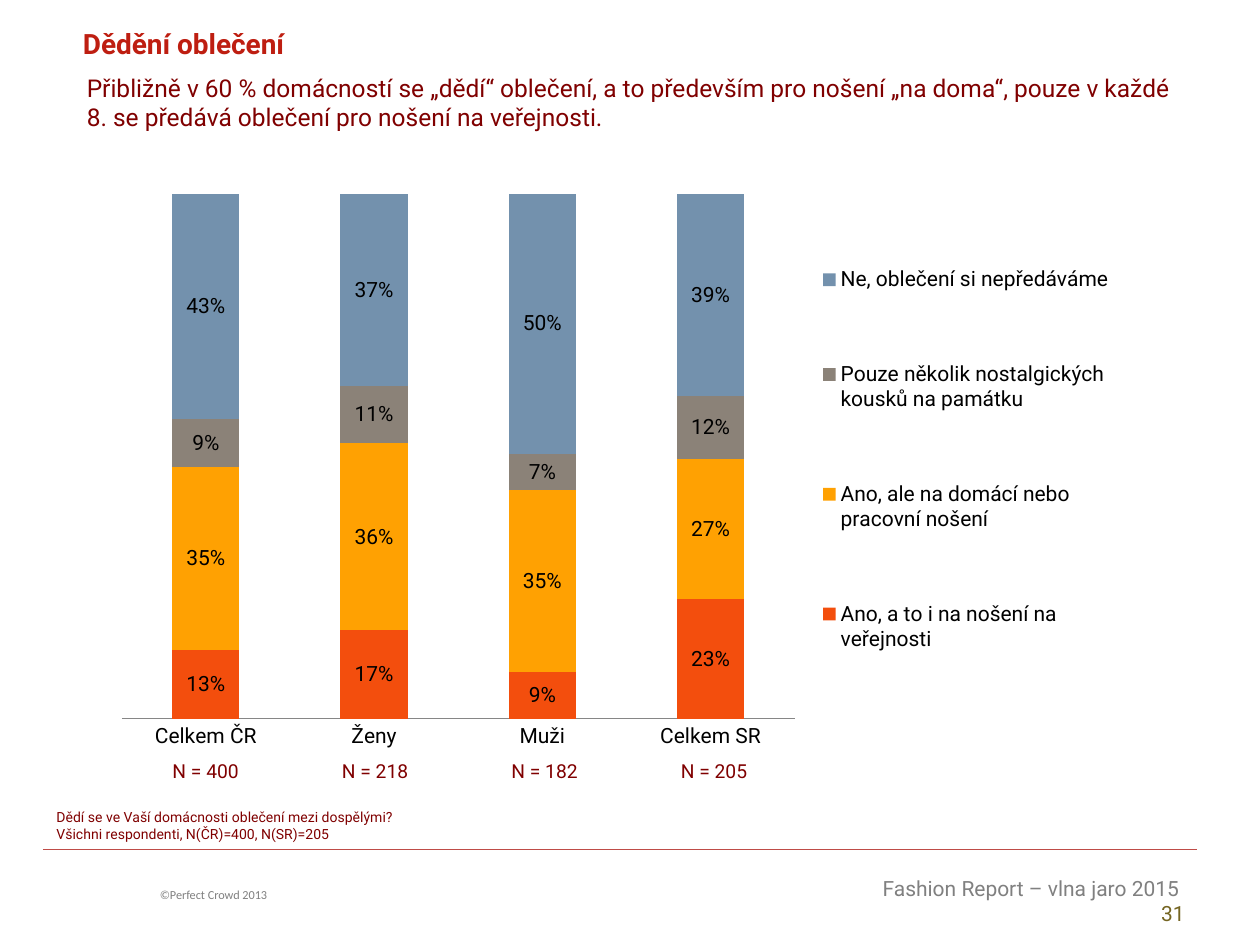
from lxml import etree
from pptx import Presentation
from pptx.chart.data import CategoryChartData
from pptx.dml.color import RGBColor
from pptx.enum.chart import XL_CHART_TYPE, XL_LEGEND_POSITION, XL_TICK_MARK
from pptx.enum.shapes import MSO_CONNECTOR
from pptx.enum.text import MSO_ANCHOR, PP_ALIGN
from pptx.oxml.ns import qn
from pptx.util import Inches, Pt

STACKED = XL_CHART_TYPE.COLUMN_STACKED_100
LEGEND_RIGHT = XL_LEGEND_POSITION.RIGHT
NO_TICK = XL_TICK_MARK.NONE
LEFT, CENTER, RIGHT = PP_ALIGN.LEFT, PP_ALIGN.CENTER, PP_ALIGN.RIGHT
STRAIGHT = MSO_CONNECTOR.STRAIGHT
color = RGBColor.from_string
MAROON, GRAY = "800000", "808080"

deck = Presentation()
deck.slide_width, deck.slide_height = Inches(10), Inches(7.5)
page = deck.slides.add_slide(deck.slide_layouts[6])


def set_layout(element, position, bounds, inner=False):
    """Place a chart part by fractions (x, y, w, h) of the chart area."""
    for old in element.findall(qn("c:layout")):
        element.remove(old)
    layout = etree.Element(qn("c:layout"))
    manual = etree.SubElement(layout, qn("c:manualLayout"))
    settings = [("layoutTarget", "inner")] if inner else []
    settings += [("xMode", "edge"), ("yMode", "edge")]
    settings += zip("xywh", bounds)
    for tag, value in settings:
        etree.SubElement(manual, qn("c:" + tag)).set("val", str(value))
    element.insert(position, layout)


# Footer rule
rule = page.shapes.add_connector(STRAIGHT, Inches(0.34), Inches(6.74), Inches(9.5), Inches(6.74))
rule.line.color.rgb = color("BF4C48")
rule.line.width = Pt(0.75)
etree.SubElement(rule._element.spPr, qn("a:effectLst"))

# Text boxes: bounds, text, font, size, colour, bold, alignment
texts = [
    ((1.17, 6.99, 2.91, 0.22), "©Perfect Crowd 2013", "Calibri", 7, GRAY, False, LEFT),
    ((5.79, 6.9, 3.71, 0.5), "Fashion Report – vlna jaro 2015 \v31", "Roboto", 12, GRAY, False, RIGHT),
    ((0.56, 0.16, 7.51, 0.37), "Dědění oblečení", "Roboto", 16, "BE1E11", True, LEFT),
    ((0.35, 6.37, 9.06, 0.37),
     "Dědí se ve Vaší domácnosti oblečení mezi dospělými?\nVšichni respondenti, N(ČR)=400, N(SR)=205",
     "Roboto", 8, MAROON, False, LEFT),
    ((0.59, 0.53, 8.98, 0.81),
     "Přibližně v 60 % domácností se „dědí“ oblečení, a to především pro nošení „na doma“, "
     "pouze v každé 8. se předává oblečení pro nošení na veřejnosti.",
     "Roboto", 14, MAROON, False, LEFT),
]
for bounds, text, font, size, ink, bold, align in texts:
    box = page.shapes.add_textbox(*map(Inches, bounds))
    box.text_frame.word_wrap = True
    box.text_frame.text = text
    for para in box.text_frame.paragraphs:
        para.alignment = align
        for span in para.runs:
            span.font.name, span.font.size, span.font.bold = font, Pt(size), bold
            span.font.color.rgb = color("756522" if span.text == "31" else ink)

# Chart
series_list = [
    ("Ano, a to i na nošení na veřejnosti", (13, 17, 9, 23), "F34E0D"),
    ("Ano, ale na domácí nebo pracovní nošení", (35, 36, 35, 27), "FFA102"),
    ("Pouze několik nostalgických kousků na památku", (9, 11, 7, 12), "8B8278"),
    ("Ne, oblečení si nepředáváme", (43, 37, 50, 39), "7391AD"),
]
data = CategoryChartData()
data.categories = ["Celkem ČR", "Ženy", "Muži", "Celkem SR"]
for name, values, _ in series_list:
    data.add_series(name, values)
chart = page.shapes.add_chart(
    STACKED, Inches(0.7), Inches(1.27), Inches(8.6), Inches(4.95), data).chart
chart.has_title = False
chart.font.name, chart.font.size = "Roboto", Pt(12)
chart.font.color.rgb = color("000000")

plot = chart.plots[0]
plot.gap_width, plot.overlap = 150, 100
plot.vary_by_categories = False
for series, (_, _, fill) in zip(plot.series, series_list):
    series.format.fill.solid()
    series.format.fill.fore_color.rgb = color(fill)
    labels = series.data_labels
    labels.show_value = True
    labels.number_format = '#,##0"%"'
    labels.number_format_is_linked = False

chart.value_axis.visible = False
chart.value_axis.has_major_gridlines = False
chart.category_axis.major_tick_mark = NO_TICK
chart.category_axis.format.line.color.rgb = color("868686")

chart.has_legend = True
chart.legend.position = LEGEND_RIGHT
chart.legend.include_in_layout = False
set_layout(chart.legend._element, 1, (0.66, 0.06, 0.3, 0.84))
set_layout(chart._chartSpace.chart.plotArea, 0, (0.031, 0.054, 0.621, 0.842), inner=True)

# Sample sizes under the columns
counts = [400, 218, 182, 205]
table = page.shapes.add_table(
    1, len(counts), Inches(0.96), Inches(6.02), Inches(5.38), Inches(0.21)).table
table.first_row = table.horz_banding = False
for cell, count in zip(table.rows[0].cells, counts):
    cell.fill.background()
    cell.margin_left = cell.margin_right = cell.margin_top = cell.margin_bottom = 0
    cell.vertical_anchor = MSO_ANCHOR.MIDDLE
    cell.text = f"N = {count}"
    para = cell.text_frame.paragraphs[0]
    para.alignment = CENTER
    span = para.runs[0]
    span.font.name, span.font.size = "Roboto", Pt(11)
    span.font.color.rgb = color(MAROON)

deck.save("out.pptx")
